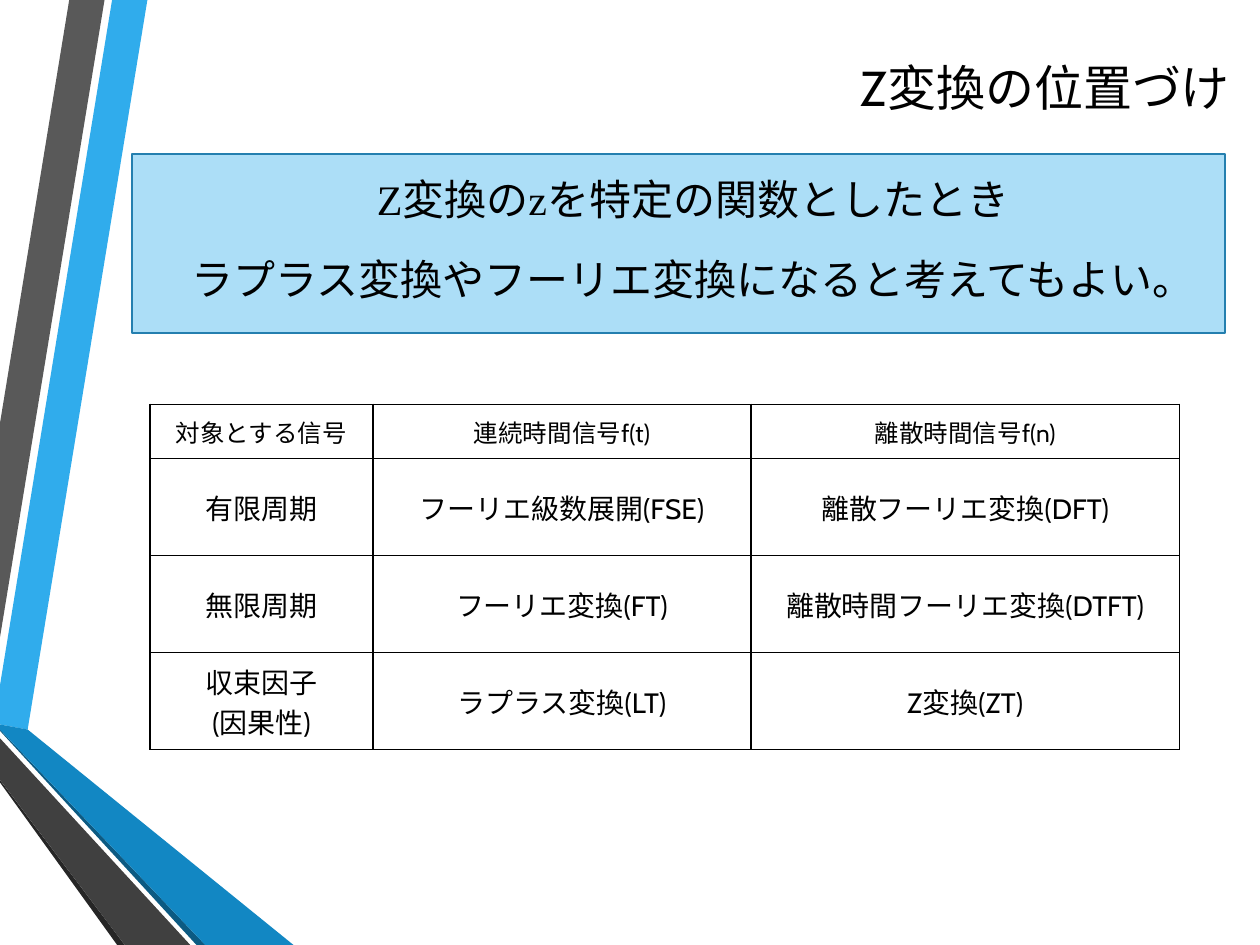
from pptx import Presentation
from pptx import util as u
from pptx.dml.color import RGBColor
from pptx.enum import shapes, text
from pptx.oxml import parse_xml
from pptx.oxml.ns import nsdecls

BLACK = "000000"
CENTER = text.PP_ALIGN.CENTER
MIDDLE = text.MSO_ANCHOR.MIDDLE

# Outlines of the folded ribbons, in inches
RIBBONS = [
    ("30ACEC", [(0, 5.44), (0, 5.75), (0.22, 5.79), (1.17, 0), (0.89, 0)]),
    ("595959", [(0.83, 0), (0.55, 0), (0, 3.36), (0, 5.06)]),
    ("262626", [(0, 6.19), (0, 6.21), (0.93, 7.5), (0.99, 7.5)]),
    ("0C5A82", [(0, 5.79), (0, 5.8), (1.56, 7.5), (1.63, 7.5)]),
    ("1287C3", [(0, 5.79), (1.63, 7.5), (2.33, 7.5), (0.22, 5.79), (0, 5.75)]),
    ("404040", [(0, 6.19), (0.99, 7.5), (1.51, 7.5), (0, 5.86)]),
]

TABLE_ROWS = [
    ["対象とする信号", "連続時間信号f(t)", "離散時間信号f(n)"],
    ["有限周期", "フーリエ級数展開(FSE)", "離散フーリエ変換(DFT)"],
    ["無限周期", "フーリエ変換(FT)", "離散時間フーリエ変換(DTFT)"],
    ["収束因子\n(因果性)", "ラプラス変換(LT)", "Z変換(ZT)"],
]
COLUMN_WIDTHS = [1.77, 3, 3.4]
ROW_HEIGHTS = [0.43, 0.77, 0.77, 0.77]


def color(value):
    return RGBColor.from_string(value)


def write(frame, content, size, font="Cabin", align=CENTER, line=None, gap=0):
    """Fill a text frame, one paragraph for each line of content."""
    frame.word_wrap = True
    for index, words in enumerate(content.split("\n")):
        para = frame.add_paragraph() if index else frame.paragraphs[0]
        para.alignment = align
        para.space_before = u.Pt(gap if index else 0)
        para.space_after = u.Pt(gap)
        if line:
            para.line_spacing = u.Pt(line)
        span = para.add_run()
        span.text = words
        span.font.size = u.Pt(size)
        span.font.name = font
        span.font.color.rgb = color(BLACK)


def add_text(page, place, content, anchor=text.MSO_ANCHOR.TOP, bottom=0.05, **style):
    box = page.shapes.add_textbox(*map(u.Inches, place))
    box.text_frame.vertical_anchor = anchor
    box.text_frame.margin_bottom = u.Inches(bottom)
    write(box.text_frame, content, **style)


def add_ribbon(page, fill, points):
    start, *rest = [(u.Inches(x), u.Inches(y)) for x, y in points]
    builder = page.shapes.build_freeform(*start)
    builder.add_line_segments(rest, close=True)
    ribbon = builder.convert_to_shape()
    ribbon.shadow.inherit = False
    ribbon.fill.solid()
    ribbon.fill.fore_color.rgb = color(fill)
    ribbon.line.fill.background()


def add_panel(page, place, fill, line):
    panel = page.shapes.add_shape(shapes.MSO_SHAPE.RECTANGLE, *map(u.Inches, place))
    panel.shadow.inherit = False
    panel.fill.solid()
    panel.fill.fore_color.rgb = color(fill)
    panel.line.color.rgb = color(line)
    panel.line.width = u.Pt(1.25)


def add_borders(cell):
    properties = cell._tc.get_or_add_tcPr()
    for index, side in enumerate(("lnL", "lnR", "lnT", "lnB")):
        border = parse_xml(
            f'<a:{side} {nsdecls("a")} w="{u.Pt(1)}"><a:solidFill>'
            f'<a:srgbClr val="{BLACK}"/></a:solidFill></a:{side}>')
        properties.insert(index, border)


def add_grid(page, left, top):
    table = page.shapes.add_table(
        len(ROW_HEIGHTS), len(COLUMN_WIDTHS), u.Inches(left), u.Inches(top),
        u.Inches(sum(COLUMN_WIDTHS)), u.Inches(sum(ROW_HEIGHTS))).table
    table.first_row = table.horz_banding = False
    for column, width in zip(table.columns, COLUMN_WIDTHS):
        column.width = u.Inches(width)
    for index, (row, height) in enumerate(zip(table.rows, ROW_HEIGHTS)):
        row.height = u.Inches(height)
        style = {"size": 16} if index else {"size": 14}
        for cell, content in zip(row.cells, TABLE_ROWS[index]):
            cell.fill.background()
            cell.vertical_anchor = MIDDLE
            cell.margin_left = cell.margin_right = u.Inches(0.07)
            cell.margin_top = cell.margin_bottom = 0
            write(cell.text_frame, content, line=21 if index == 0 else None, **style)
            add_borders(cell)


def main():
    deck = Presentation()
    deck.slide_width, deck.slide_height = u.Inches(10), u.Inches(7.5)
    page = deck.slides.add_slide(deck.slide_layouts[6])

    # Ribbons on the left edge
    for fill, points in RIBBONS:
        add_ribbon(page, fill, points)

    # Key statement on its panel
    add_panel(page, (1.05, 1.22, 8.67, 1.42), "ACDEF7", "247FAF")
    add_text(page, (1.38, 1.26, 8.24, 0.55),
             "Z変換のzを特定の関数としたとき\n"
             "ラプラス変換やフーリエ変換になると考えてもよい。",
             size=24, font="Times New Roman", line=33.6, gap=6)

    # Title, raised above the middle of its box
    add_text(page, (1.43, 0.23, 8.43, 1.34), "Z変換の位置づけ", anchor=MIDDLE,
             bottom=0.47, size=28, align=text.PP_ALIGN.RIGHT)

    # Transforms by kind of signal
    add_grid(page, 1.19, 3.21)

    deck.save("out.pptx")


if __name__ == "__main__":
    main()
